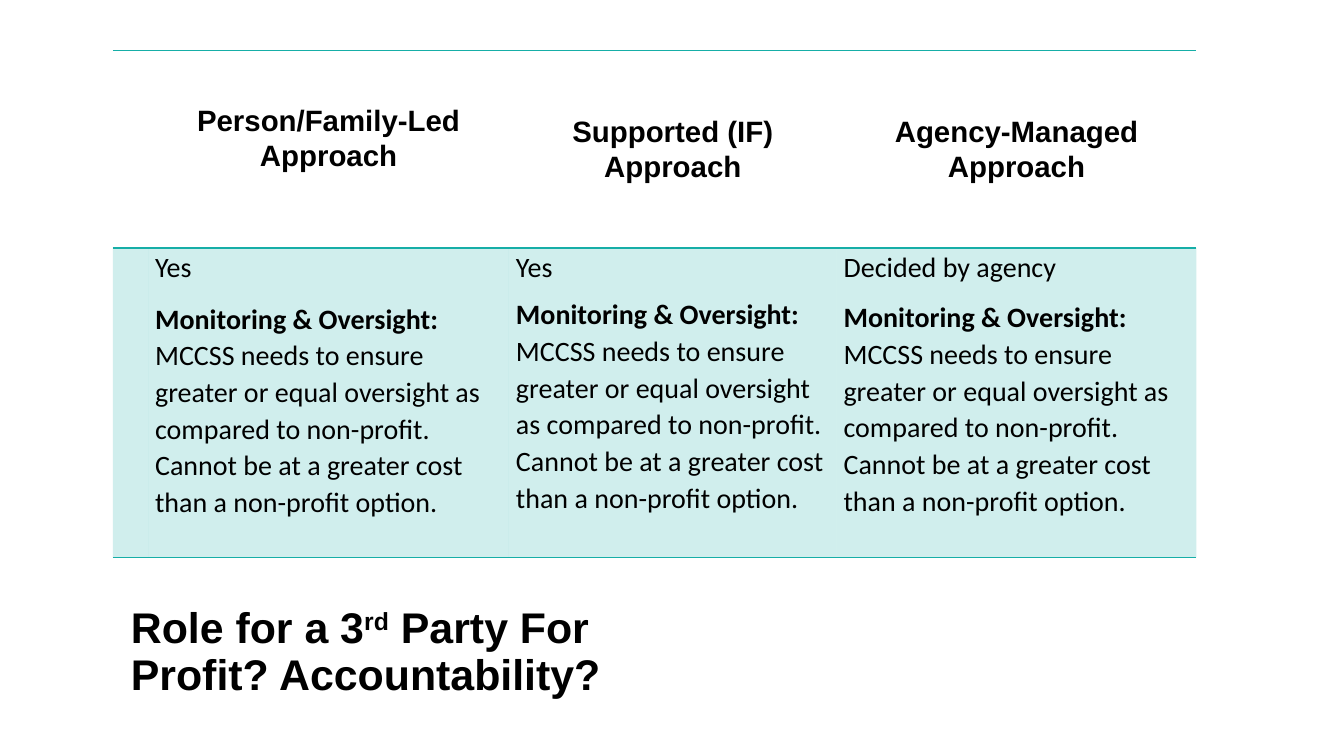
from dataclasses import dataclass

from lxml import etree
from pptx import Presentation
from pptx import util as u
from pptx.dml.color import RGBColor
from pptx.enum import text
from pptx.oxml import ns


@dataclass(frozen=True)
class Theme:
    """Colours, fonts and type sizes in points."""
    teal: str = "16AEA7"
    tint_alpha: int = 20000
    ink: RGBColor = RGBColor(0, 0, 0)
    heading_font: str = "Arial"
    body_font: str = "Calibri"
    title_size: float = 30.6
    heading_size: float = 21
    body_size: float = 20
    title_spacing: float = 0.91
    table_spacing: float = 1.07


@dataclass(frozen=True)
class Approach:
    """One column of the comparison."""
    heading: str
    answer: str
    width: float
    answer_before: float
    oversight_before: float
    lift: float = 0


THEME = Theme()
SPACER_WIDTH = 25.2
HEADING_HEIGHT, ANSWER_HEIGHT = 141.1, 221
NO_STYLE = "{2D5ABB26-0587-4C30-8999-92F81FD0307C}"
OVERSIGHT = "Monitoring & Oversight:"
REQUIREMENT = (" MCCSS needs to ensure greater or equal oversight as compared to "
               "non-profit. Cannot be at a greater cost than a non-profit option.")
APPROACHES = (
    Approach("Person/Family-Led Approach", "Yes", 257.8, 3, 3, lift=16),
    Approach("Supported (IF) Approach", "Yes", 234, 3, 0),
    Approach("Agency-Managed Approach", "Decided by agency", 257, 2, 2),
)


def style_paragraph(paragraph, font: str, size: float, spacing: float,
                    bold: bool | None = None, before: float = 0) -> None:
    """Set the type and spacing of a paragraph."""
    paragraph.font.name = font
    paragraph.font.size = u.Pt(size)
    paragraph.font.bold = bold
    paragraph.font.color.rgb = THEME.ink
    paragraph.line_spacing = spacing
    paragraph.space_before = u.Pt(before)
    paragraph.space_after = u.Pt(8)


def add_solid(parent, alpha: int | None = None) -> None:
    """Append a teal fill, translucent if an alpha is given."""
    fill = etree.SubElement(parent, ns.qn("a:solidFill"))
    colour = etree.SubElement(fill, ns.qn("a:srgbClr"), val=THEME.teal)
    if alpha is not None:
        etree.SubElement(colour, ns.qn("a:alpha"), val=str(alpha))


def decorate(cell, edges: tuple[str, ...], tinted: bool) -> None:
    """Draw the ruled edges and the tint of a cell."""
    properties = cell._tc.get_or_add_tcPr()
    for edge in edges:
        rule = etree.SubElement(properties, ns.qn(f"a:{edge}"), w=str(u.Pt(1)))
        add_solid(rule)
    if tinted:
        add_solid(properties, THEME.tint_alpha)
    else:
        cell.fill.background()


def set_margins(cell, side: float, bottom: float = 0) -> None:
    """Set the margins of a cell."""
    cell.margin_left = cell.margin_right = u.Pt(side)
    cell.margin_top, cell.margin_bottom = u.Pt(0), u.Pt(bottom)


def fill_heading(cell, approach: Approach) -> None:
    """Write the heading of an approach."""
    set_margins(cell, 8.6, approach.lift)
    cell.vertical_anchor = text.MSO_ANCHOR.MIDDLE
    heading = cell.text_frame.paragraphs[0]
    heading.add_run().text = approach.heading
    heading.alignment = text.PP_ALIGN.CENTER
    style_paragraph(heading, THEME.heading_font, THEME.heading_size,
                    THEME.table_spacing, bold=True)


def fill_answer(cell, approach: Approach) -> None:
    """Write the answer and the oversight rule of an approach."""
    set_margins(cell, 5)
    answer = cell.text_frame.paragraphs[0]
    answer.add_run().text = approach.answer
    oversight = cell.text_frame.add_paragraph()
    for words, bold in ((OVERSIGHT, True), (REQUIREMENT, False)):
        run = oversight.add_run()
        run.text, run.font.bold = words, bold
    for paragraph, before in ((answer, approach.answer_before),
                              (oversight, approach.oversight_before)):
        style_paragraph(paragraph, THEME.body_font, THEME.body_size,
                        THEME.table_spacing, before=before)


def add_comparison(slide) -> None:
    """Add the table of approaches."""
    widths = [SPACER_WIDTH] + [approach.width for approach in APPROACHES]
    frame = slide.shapes.add_table(
        2, len(widths), u.Pt(80.6), u.Pt(36), u.Pt(sum(widths)),
        u.Pt(HEADING_HEIGHT + ANSWER_HEIGHT))
    comparison = frame.table
    comparison.first_row = comparison.horz_banding = False
    comparison._tbl.tblPr.find(ns.qn("a:tableStyleId")).text = NO_STYLE
    for row, height in zip(comparison.rows, (HEADING_HEIGHT, ANSWER_HEIGHT)):
        row.height = u.Pt(height)
    for index, width in enumerate(widths):
        comparison.columns[index].width = u.Pt(width)
        decorate(comparison.cell(0, index), ("lnT", "lnB"), tinted=False)
        decorate(comparison.cell(1, index), ("lnT", "lnB"), tinted=True)
    for index, approach in enumerate(APPROACHES, start=1):
        fill_heading(comparison.cell(0, index), approach)
        fill_answer(comparison.cell(1, index), approach)


def add_title(slide) -> None:
    """Add the question below the table."""
    box = slide.shapes.add_textbox(u.Pt(86.4), u.Pt(428.4), u.Pt(433.4), u.Pt(75.6))
    frame = box.text_frame
    frame.word_wrap = True
    frame.vertical_anchor = text.MSO_ANCHOR.MIDDLE
    question = frame.paragraphs[0]
    for words, raised in (("Role for a 3", False), ("rd", True),
                          (" Party For Profit? Accountability?", False)):
        run = question.add_run()
        run.text = words
        if raised:
            run._r.get_or_add_rPr().set("baseline", "30000")
    style_paragraph(question, THEME.heading_font, THEME.title_size,
                    THEME.title_spacing, bold=True)


def main() -> None:
    """Build and save the slide."""
    deck = Presentation()
    deck.slide_width, deck.slide_height = u.Pt(960), u.Pt(540)
    slide = deck.slides.add_slide(deck.slide_layouts[6])
    add_comparison(slide)
    add_title(slide)
    deck.save("out.pptx")


if __name__ == "__main__":
    main()
